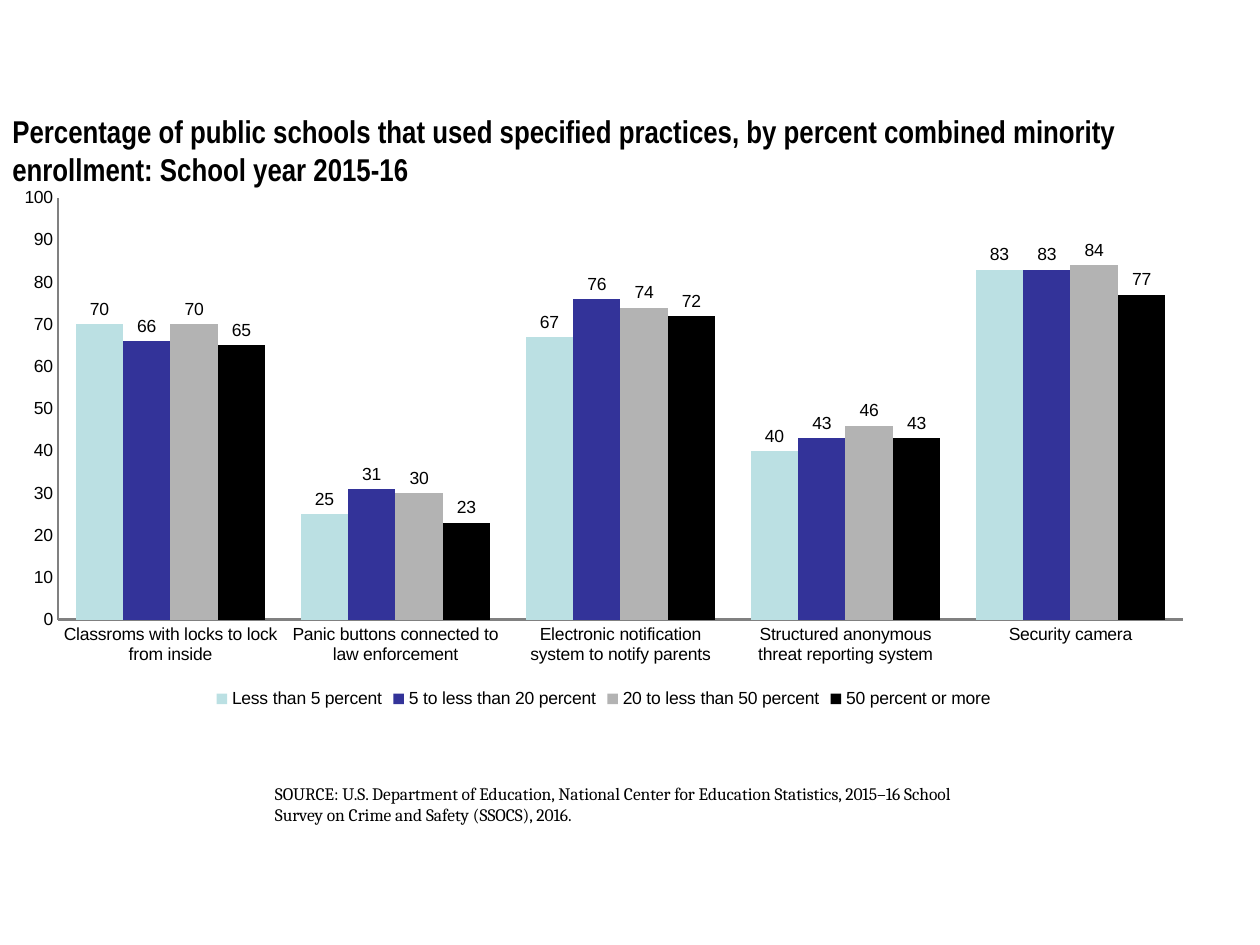
from lxml.etree import SubElement as Sub
from pptx import Presentation
from pptx.chart.data import CategoryChartData as Data
from pptx.dml.color import RGBColor as Rgb
from pptx.enum.chart import XL_CHART_TYPE as Kind, XL_LABEL_POSITION as Spot
from pptx.enum.chart import XL_LEGEND_POSITION as Side, XL_TICK_MARK as Tick
from pptx.enum.shapes import MSO_SHAPE as Shape
from pptx.enum.text import MSO_ANCHOR as Anchor, PP_ALIGN as Align
from pptx.oxml.ns import qn
from pptx.util import Inches, Pt

COLS, ROWS = 100, 75
HUES = {
    "white": "FFFFFF", "black": "000000", "axis": "808080",
    "aqua": "BBE0E3", "navy": "333399", "gray": "B3B3B3",
}
TITLE = ("Percentage of public schools that used specified practices, "
         "by percent combined minority enrollment: School year 2015-16")
SOURCE = ("SOURCE: U.S. Department of Education, National Center for Education "
          "Statistics, 2015–16 School Survey on Crime and Safety (SSOCS), 2016.")
CATS = [
    "Classroms with locks to lock from inside",
    "Panic buttons connected to law enforcement",
    "Electronic notification system to notify parents",
    "Structured anonymous threat reporting system",
    "Security camera",
]
RATES = [
    ("Less than 5 percent", "aqua", [70, 25, 67, 40, 83]),
    ("5 to less than 20 percent", "navy", [66, 31, 76, 43, 83]),
    ("20 to less than 50 percent", "gray", [70, 30, 74, 46, 84]),
    ("50 percent or more", "black", [65, 23, 72, 43, 77]),
]


def hue(name):
    return Rgb.from_string(HUES[name])


def style(font, face="Arial", size=10, bold=False, color="black"):
    font.name, font.size, font.bold = face, Pt(size), bold
    font.color.rgb = hue(color)


def write(frame, text, anchor=Anchor.TOP, **look):
    frame.word_wrap = True
    frame.vertical_anchor = anchor
    para = frame.paragraphs[0]
    para.alignment = Align.LEFT
    run = para.add_run()
    run.text = text
    style(run.font, **look)


class Deck:
    def __init__(self):
        self.show = Presentation()
        self.show.slide_width, self.show.slide_height = Inches(10), Inches(7.5)
        self.slide = self.show.slides.add_slide(self.show.slide_layouts[6])

    def grid(self, col, row, wide, high):
        x = self.show.slide_width / COLS
        y = self.show.slide_height / ROWS
        return [int(n) for n in (col * x, row * y, wide * x, high * y)]

    def text(self, spot, words, **look):
        box = self.slide.shapes.add_textbox(*self.grid(*spot))
        write(box.text_frame, words, **look)

    def panel(self, spot, words, fill="white", **look):
        box = self.slide.shapes.add_shape(Shape.RECTANGLE, *self.grid(*spot))
        box.shadow.inherit = False
        box.fill.solid()
        box.fill.fore_color.rgb = hue(fill)
        box.line.fill.background()
        write(box.text_frame, words, **look)

    def bars(self, spot, inner, cats, rates, top=100, step=10, gap=75):
        data = Data(number_format="0")
        data.categories = cats
        for name, _, vals in rates:
            data.add_series(name, vals)
        frame = self.slide.shapes.add_chart(
            Kind.COLUMN_CLUSTERED, *self.grid(*spot), data)
        chart = frame.chart
        chart.has_title = False
        style(chart.font)
        chart.has_legend = True
        chart.legend.position = Side.BOTTOM
        chart.legend.include_in_layout = False
        for axis in (chart.category_axis, chart.value_axis):
            axis.major_tick_mark = axis.minor_tick_mark = Tick.NONE
            axis.has_major_gridlines = False
            axis.format.line.color.rgb = hue("axis")
        chart.category_axis.format.line.width = Pt(1.5)
        axis = chart.value_axis
        axis.minimum_scale, axis.maximum_scale = 0, top
        axis.major_unit = step
        plot = chart.plots[0]
        plot.gap_width, plot.overlap = gap, 0
        plot.vary_by_categories = False
        for bar, (_, color, _) in zip(plot.series, rates):
            bar.format.fill.solid()
            bar.format.fill.fore_color.rgb = hue(color)
            bar.invert_if_negative = False
            tags = bar.data_labels
            tags.show_value = True
            tags.number_format, tags.number_format_is_linked = "0", False
            tags.position = Spot.OUTSIDE_END
            style(tags.font)
        self.place(chart, spot, inner)

    def place(self, chart, spot, inner):
        area = chart.plots[0]._element.getparent()
        old = area.find(qn("c:layout"))
        if old is not None:
            area.remove(old)
        lay = area.makeelement(qn("c:layout"))
        area.insert(0, lay)
        hand = Sub(lay, qn("c:manualLayout"))
        left, top, wide, high = spot
        col, row, across, down = inner
        marks = {
            "layoutTarget": "inner", "xMode": "edge", "yMode": "edge",
            "x": (col - left) / wide, "y": (row - top) / high,
            "w": across / wide, "h": down / high,
        }
        for tag, val in marks.items():
            Sub(hand, qn(f"c:{tag}")).set("val", str(val))


def main():
    deck = Deck()
    deck.bars((0, 14.15, 95.8, 42.5), (4.6, 15.7, 89.3, 33.5), CATS, RATES)
    deck.panel((20.83, 61.65, 58.8, 4.4), SOURCE, face="Cambria")
    deck.text((0, 9, 90, 5.8), TITLE, anchor=Anchor.MIDDLE,
              face="Arial Narrow", size=18, bold=True)
    deck.show.save("out.pptx")


if __name__ == "__main__":
    main()
